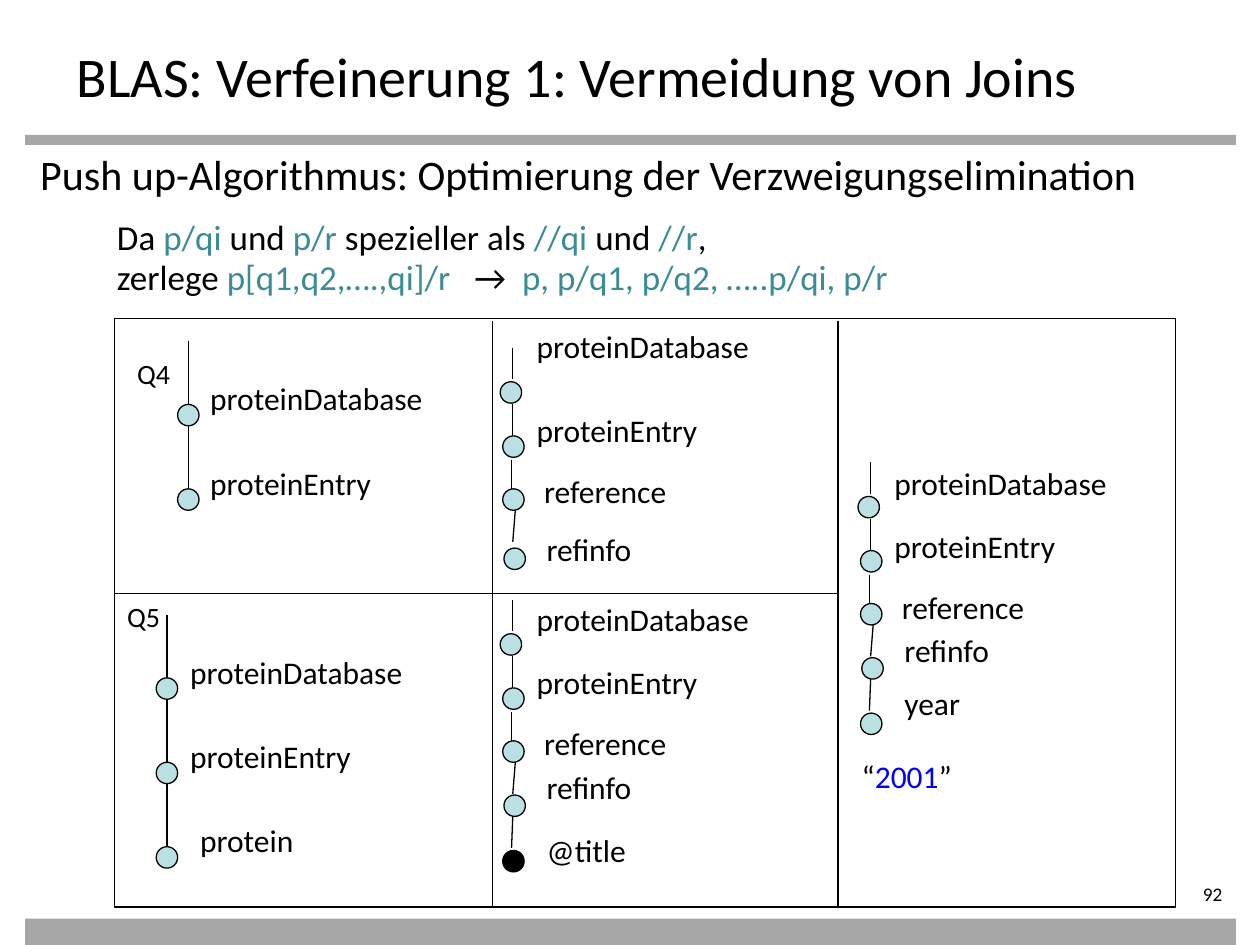
from pptx import Presentation
from pptx.dml.color import RGBColor
from pptx.enum.shapes import MSO_CONNECTOR, MSO_SHAPE
from pptx.enum.text import MSO_ANCHOR, PP_ALIGN
from pptx.oxml.ns import qn
from pptx.util import Inches, Pt
from lxml import etree

STRAIGHT = MSO_CONNECTOR.STRAIGHT
RECTANGLE = MSO_SHAPE.RECTANGLE
OVAL = MSO_SHAPE.OVAL
TOP = MSO_ANCHOR.TOP
LEFT = PP_ALIGN.LEFT
RIGHT = PP_ALIGN.RIGHT

BLACK = "000000"
GREY = "A6A6A6"
TEAL = "3C8C93"
BLUE = "0000FF"
NODE_FILL = "BBE0E3"
NODE_SIZE = 0.17
PATH = ["proteinDatabase", "proteinEntry", "reference", "refinfo"]
BRANCH_LINES = [(0, 0, 0, 0.25), (0, 0.45, 0, 0.7), (-0.01, 0.89, -0.01, 1.14),
                (0.02, 1.29, 0, 1.54), (0, 1.72, -0.01, 1.97)]
BRANCH_NODES = [(-0.1, 0.27), (-0.08, 0.7), (-0.08, 1.12), (-0.07, 1.55), (-0.08, 1.99)]
LABEL_OFFSETS = [0.09, 0.09, 0.15, 0.17, 0.17]


def color(value):
    return RGBColor.from_string(value)


def write(frame, spans, size=18, align=LEFT, insets=(0.1, 0.05, 0.1, 0.05)):
    if isinstance(spans, str):
        spans = [(spans, BLACK)]
    frame.word_wrap = True
    frame.vertical_anchor = TOP
    (frame.margin_left, frame.margin_top,
     frame.margin_right, frame.margin_bottom) = [Inches(inset) for inset in insets]
    para = frame.paragraphs[0]
    para.alignment = align
    for text, tint in spans:
        span = para.add_run()
        span.text = text
        span.font.name = "Calibri"
        span.font.size = Pt(size)
        span.font.color.rgb = color(tint)


class TreeSlide:
    def __init__(self, deck):
        self.page = deck.slides.add_slide(deck.slide_layouts[5])
        self.shapes = self.page.shapes

    def title(self, text, left, top, width, height):
        box = self.shapes.title
        box.left, box.top = Inches(left), Inches(top)
        box.width, box.height = Inches(width), Inches(height)
        write(box.text_frame, text, size=32)

    def text(self, spans, left, top, width, height, **style):
        box = self.shapes.add_textbox(Inches(left), Inches(top), Inches(width), Inches(height))
        write(box.text_frame, spans, **style)

    def shape(self, kind, left, top, width, height, fill=None, line=None):
        shape = self.shapes.add_shape(kind, Inches(left), Inches(top), Inches(width), Inches(height))
        shape.shadow.inherit = False
        if fill:
            shape.fill.solid()
            shape.fill.fore_color.rgb = color(fill)
        else:
            shape.fill.background()
        if line:
            shape.line.color.rgb = color(line)
            shape.line.width = Pt(0.75)
        else:
            shape.line.fill.background()
        return shape

    def node(self, left, top, fill=NODE_FILL):
        return self.shape(OVAL, left, top, NODE_SIZE, NODE_SIZE, fill, BLACK)

    def line(self, x1, y1, x2, y2):
        line = self.shapes.add_connector(STRAIGHT, Inches(x1), Inches(y1), Inches(x2), Inches(y2))
        line.line.color.rgb = color(BLACK)
        line.line.width = Pt(0.75)
        etree.SubElement(line._element.spPr, qn("a:effectLst"))
        return line

    def chain(self, left, top, labels):
        center = left + NODE_SIZE / 2
        for index, (label, offset) in enumerate(labels):
            start = top + index * 0.67
            node = self.node(left, start + 0.5)
            self.line(center, start, center, start + 0.5).end_connect(node, 0)
            self.text(label, left + offset, start + 0.25, 2.42, 0.5)

    def branch(self, x, y, names, label_tops, last_top, last_fill=NODE_FILL):
        for index, name in enumerate(names):
            x1, y1, x2, y2 = BRANCH_LINES[index]
            self.line(x + x1, y + y1, x + x2, y + y2)
            dx, dy = BRANCH_NODES[index]
            is_last = index == len(names) - 1
            self.node(x + dx, last_top if is_last else y + dy, last_fill if is_last else NODE_FILL)
            self.text(name, x + LABEL_OFFSETS[index], label_tops[index], 2.42, 0.5)


def main():
    deck = Presentation()
    deck.slide_width, deck.slide_height = Inches(10), Inches(7.5)
    slide = TreeSlide(deck)

    slide.shape(RECTANGLE, 0.2, 1.07, 9.61, 0.08, GREY)
    slide.shape(RECTANGLE, 0.2, 7.29, 9.61, 0.21, GREY)
    slide.title("BLAS: Verfeinerung 1: Vermeidung von Joins", 0.51, 0.28, 9, 0.55)
    slide.text("Push up-Algorithmus: Optimierung der Verzweigungselimination",
               0.16, 1.13, 9.7, 0.5, size=24, insets=(0.16, 0.05, 0.1, 0.05))
    slide.text([("Da ", BLACK), ("p/qi ", TEAL), ("und ", BLACK), ("p/r ", TEAL),
                ("spezieller als ", BLACK), ("//qi ", TEAL), ("und ", BLACK),
                ("//r", TEAL), (",", BLACK)], 0.83, 1.66, 7.08, 0.44, size=20)
    slide.text([("zerlege ", BLACK), ("p[q1,q2,….,qi]/r   ", TEAL), ("→  ", BLACK),
                ("p, p/q1, p/q2, …..p/qi, p/r", TEAL)], 0.83, 1.98, 8.07, 0.43, size=20)

    slide.shape(RECTANGLE, 0.91, 2.53, 8.42, 4.67, line=BLACK)
    slide.line(0.91, 4.71, 6.66, 4.71)
    for divider in (3.91, 6.65):
        slide.line(divider, 2.55, divider, 7.21)

    slide.text("Q4", 0.99, 2.78, 0.75, 0.37, size=16)
    slide.chain(1.41, 2.71, [("proteinDatabase", 0.16), ("proteinEntry", 0.16)])
    slide.text("Q5", 0.91, 4.71, 0.75, 0.37, size=16)
    slide.chain(1.24, 4.88, [("proteinDatabase", 0.17), ("proteinEntry", 0.17), ("protein", 0.25)])

    slide.branch(4.07, 2.76, PATH, [2.55, 3.21, 3.7, 4.16], 4.35)
    slide.branch(4.07, 4.76, PATH + ["@title"], [4.71, 5.21, 5.7, 6.05, 6.55], 6.75, BLACK)
    slide.branch(6.91, 3.67, PATH + ["year"], [3.63, 4.13, 4.62, 4.96, 5.38], 5.66)
    slide.text([("“", BLACK), ("2001", BLUE), ("”", BLACK)], 6.74, 5.96, 1.42, 0.4)
    slide.text("92", 8.7, 7, 1.1, 0.22, size=11, align=RIGHT, insets=(0, 0, 0.1, 0))

    deck.save("out.pptx")


if __name__ == "__main__":
    main()
